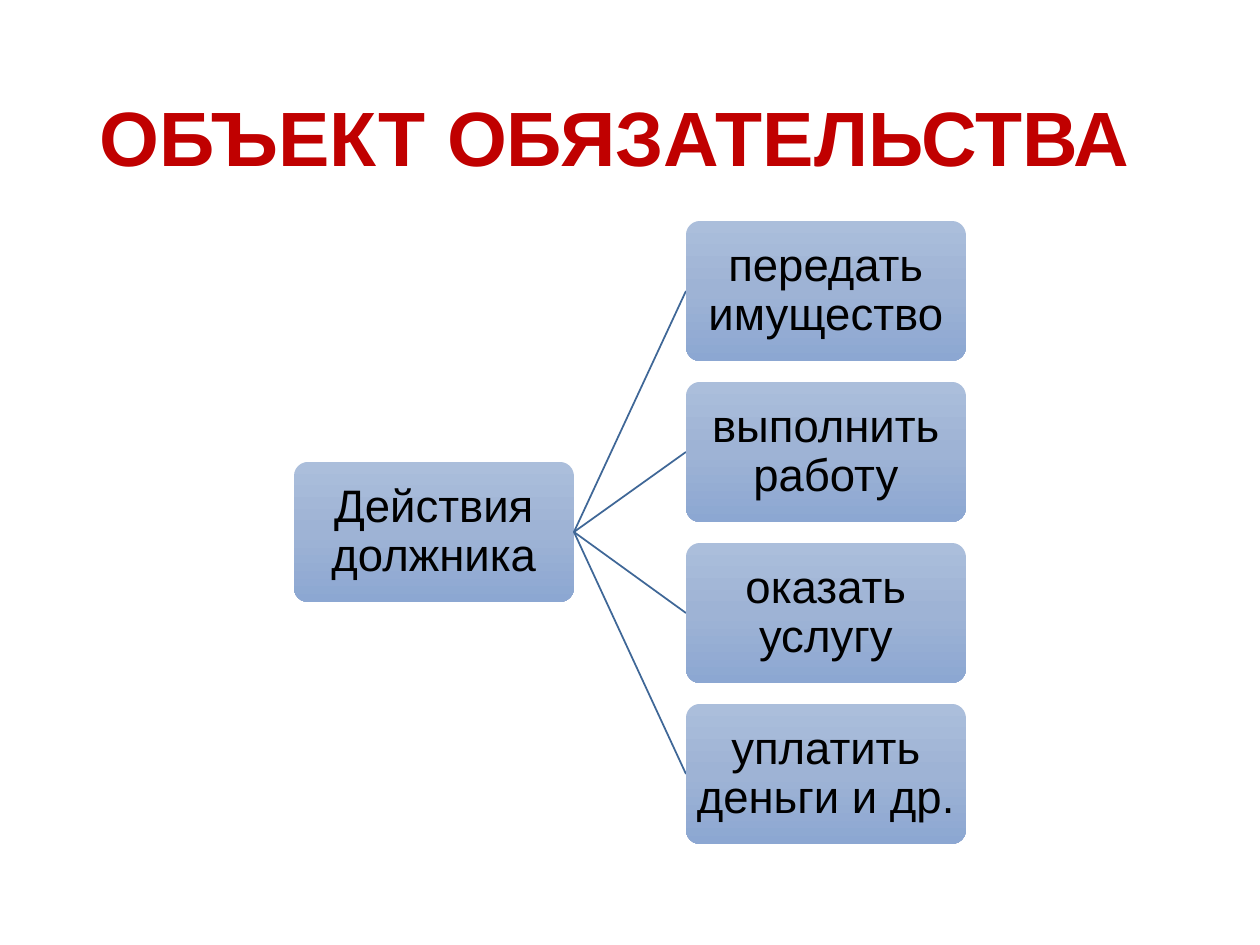
from copy import deepcopy

from lxml import etree
from pptx import Presentation
from pptx.dml.color import RGBColor
from pptx.enum.shapes import MSO_CONNECTOR, MSO_SHAPE
from pptx.enum.text import MSO_ANCHOR, PP_ALIGN
from pptx.oxml.ns import qn
from pptx.util import Emu, Pt

SCALE = 914400 // 126
ROUNDED = MSO_SHAPE.ROUNDED_RECTANGLE
STRAIGHT = MSO_CONNECTOR.STRAIGHT
MIDDLE = MSO_ANCHOR.MIDDLE
LEFT, CENTER = PP_ALIGN.LEFT, PP_ALIGN.CENTER
FONT = "Arial"
COLORS = {
    "title": "C00000",
    "text": "000000",
    "line": "3F6797",
    "top": "ABBEDB",
    "middle": "9EB3D5",
    "bottom": "8CA7D2",
}
BOX_W, BOX_H, STEP = 280, 140, 161
ROOT_X, BRANCH_X, BRANCH_Y = 294, 686, 221
ACTIONS = ["передать имущество", "выполнить работу", "оказать услугу", "уплатить деньги и др."]


def px(n):
    return Emu(n * SCALE)


def rgb(name):
    return RGBColor.from_string(COLORS[name])


class Deck:
    """Draws styled elements on the current slide."""

    def __init__(self):
        self.prs = Presentation()
        self.prs.slide_width, self.prs.slide_height = px(1260), px(945)
        self.s = self.prs.slides.add_slide(self.prs.slide_layouts[6])

    def label(self, sp, text, size, color, align, bold=False):
        tf = sp.text_frame
        tf.word_wrap = True
        tf.vertical_anchor = MIDDLE
        p = tf.paragraphs[0]
        p.text = text
        p.alignment = align
        p.line_spacing = 0.9
        p.font.name, p.font.size, p.font.bold = FONT, Pt(size), bold
        p.font.color.rgb = rgb(color)
        return tf

    def title(self, x, y, w, h, text):
        sp = self.s.shapes.add_textbox(px(x), px(y), px(w), px(h))
        self.label(sp, text, 44, "title", LEFT, True)

    def gradient(self, sp):
        sp.fill.gradient()
        sp.fill.gradient_angle = 270
        stops = sp._element.spPr.find(".//" + qn("a:gsLst"))
        stops.insert(1, deepcopy(stops[0]))
        for i, (stop, name) in enumerate(zip(sp.fill.gradient_stops, ("top", "middle", "bottom"))):
            stop.position = i / 2
            stop.color.rgb = rgb(name)

    def box(self, x, y, text):
        sp = self.s.shapes.add_shape(ROUNDED, px(x), px(y), px(BOX_W), px(BOX_H))
        sp.adjustments[0] = 0.1
        sp.shadow.inherit = False
        sp.line.fill.background()
        self.gradient(sp)
        tf = self.label(sp, text, 26, "text", CENTER)
        tf.margin_left = tf.margin_right = tf.margin_top = tf.margin_bottom = px(6)

    def line(self, x1, y1, x2, y2):
        cn = self.s.shapes.add_connector(STRAIGHT, px(x1), px(y1), px(x2), px(y2))
        cn.line.color.rgb = rgb("line")
        cn.line.width = Pt(1)
        etree.SubElement(cn._element.spPr, qn("a:effectLst"))


def main():
    deck = Deck()
    deck.title(87, 50, 1086, 183, "ОБЪЕКТ ОБЯЗАТЕЛЬСТВА")
    root_y = BRANCH_Y + STEP * (len(ACTIONS) - 1) // 2
    deck.box(ROOT_X, root_y, "Действия должника")
    for i, action in enumerate(ACTIONS):
        y = BRANCH_Y + i * STEP
        deck.line(ROOT_X + BOX_W, root_y + BOX_H // 2, BRANCH_X, y + BOX_H // 2)
        deck.box(BRANCH_X, y, action)
    deck.prs.save("out.pptx")


if __name__ == "__main__":
    main()
